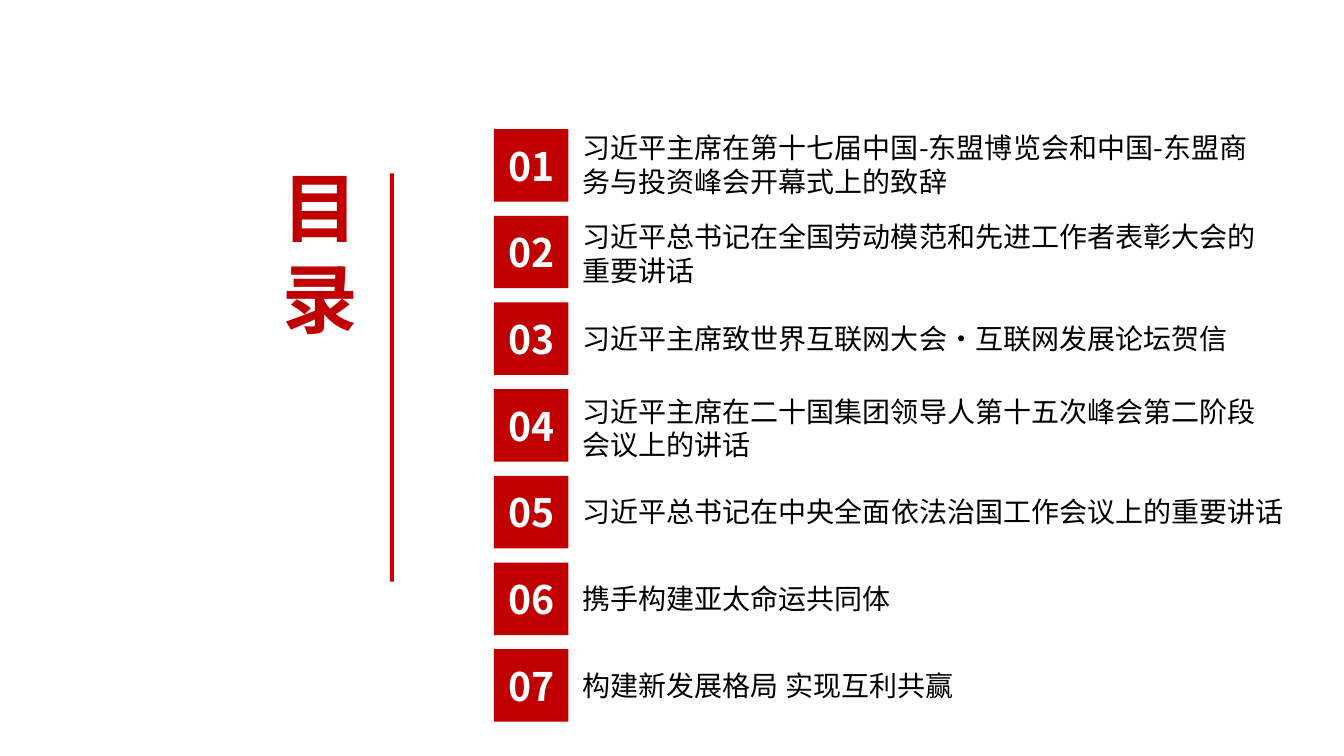
from dataclasses import dataclass

from lxml.etree import SubElement
from pptx import Presentation
from pptx.dml.color import RGBColor as Color
from pptx.enum.shapes import MSO_SHAPE as Preset
from pptx.enum.text import MSO_ANCHOR as Anchor
from pptx.enum.text import MSO_AUTO_SIZE as AutoSize
from pptx.enum.text import PP_ALIGN as Align
from pptx.oxml.ns import qn
from pptx.util import Pt


@dataclass(frozen=True)
class Theme:
    font: str = "Noto Sans CJK SC"
    red: str = "C00000"
    rule_red: str = "C80000"
    white: str = "FFFFFF"
    black: str = "000000"
    title_size: float = 54
    number_size: float = 28
    entry_size: float = 20


@dataclass(frozen=True)
class Box:
    left: float
    top: float
    width: float
    height: float

    def lengths(self) -> tuple:
        return tuple(Pt(n) for n in (self.left, self.top, self.width, self.height))


@dataclass(frozen=True)
class Entry:
    text: str
    drop: float = 10.1
    width: float = 499
    height: float = 31.7


THEME = Theme()
TITLE = Box(196.6, 112.3, 86.4, 136.1)
RULE = Box(278.6, 123.8, 2.9, 291.6)
FIRST_TILE = Box(352.8, 92.2, 53.3, 51.8)
TILE_PITCH = 61.92
ENTRY_LEFT = 409
ENTRIES = (
    Entry("习近平主席在第十七届中国-东盟博览会和中国-东盟商务与投资峰会开幕式上的致辞", -2.2, 507, 55.4),
    Entry("习近平总书记在全国劳动模范和先进工作者表彰大会的重要讲话", -0.7, 507, 55.4),
    Entry("习近平主席致世界互联网大会·互联网发展论坛贺信"),
    Entry("习近平主席在二十国集团领导人第十五次峰会第二阶段会议上的讲话", 0, 499, 55.4),
    Entry("习近平总书记在中央全面依法治国工作会议上的重要讲话", width=519),
    Entry("携手构建亚太命运共同体"),
    Entry("构建新发展格局 实现互利共赢"),
)


def write(shape, text: str, size: float, color: str, bold: bool, frame_format: dict, align=None) -> None:
    frame = shape.text_frame
    for name, value in frame_format.items():
        setattr(frame, name, value)
    para = frame.paragraphs[0]
    para.alignment = align
    span = para.add_run()
    span.text = text
    for name, value in {"name": THEME.font, "size": Pt(size), "bold": bold}.items():
        setattr(span.font, name, value)
    span.font.color.rgb = Color.from_string(color)
    SubElement(span.font._element, qn("a:ea"), typeface=THEME.font)


def add_block(shapes, box: Box, color: str):
    block = shapes.add_shape(Preset.RECTANGLE, *box.lengths())
    block.shadow.inherit = False
    block.fill.solid()
    block.fill.fore_color.rgb = Color.from_string(color)
    block.line.fill.background()
    return block


def add_title(shapes) -> None:
    title = shapes.add_textbox(*TITLE.lengths())
    frame_format = {
        "word_wrap": True,
        "auto_size": AutoSize.SHAPE_TO_FIT_TEXT,
        "margin_left": Pt(5),
        "margin_right": Pt(5),
        "margin_top": Pt(2.9),
        "margin_bottom": Pt(2.9),
    }
    write(title, "目录", THEME.title_size, THEME.red, True, frame_format)


def add_entry(shapes, index: int, entry: Entry) -> None:
    group = shapes.add_group_shape()
    top = FIRST_TILE.top + index * TILE_PITCH
    entry_box = Box(ENTRY_LEFT, top + entry.drop, entry.width, entry.height)
    label = group.shapes.add_textbox(*entry_box.lengths())
    label_format = {"word_wrap": True, "auto_size": AutoSize.SHAPE_TO_FIT_TEXT}
    write(label, entry.text, THEME.entry_size, THEME.black, False, label_format)
    tile_box = Box(FIRST_TILE.left, top, FIRST_TILE.width, FIRST_TILE.height)
    tile = add_block(group.shapes, tile_box, THEME.red)
    tile_format = {"word_wrap": True, "vertical_anchor": Anchor.MIDDLE}
    write(tile, f"{index + 1:02}", THEME.number_size, THEME.white, True, tile_format, Align.CENTER)


def main() -> None:
    deck = Presentation()
    deck.slide_width, deck.slide_height = Pt(960), Pt(540)
    page = deck.slides.add_slide(deck.slide_layouts[6])
    add_title(page.shapes)
    add_block(page.shapes, RULE, THEME.rule_red)
    for index, entry in enumerate(ENTRIES):
        add_entry(page.shapes, index, entry)
    deck.save("out.pptx")


if __name__ == "__main__":
    main()
